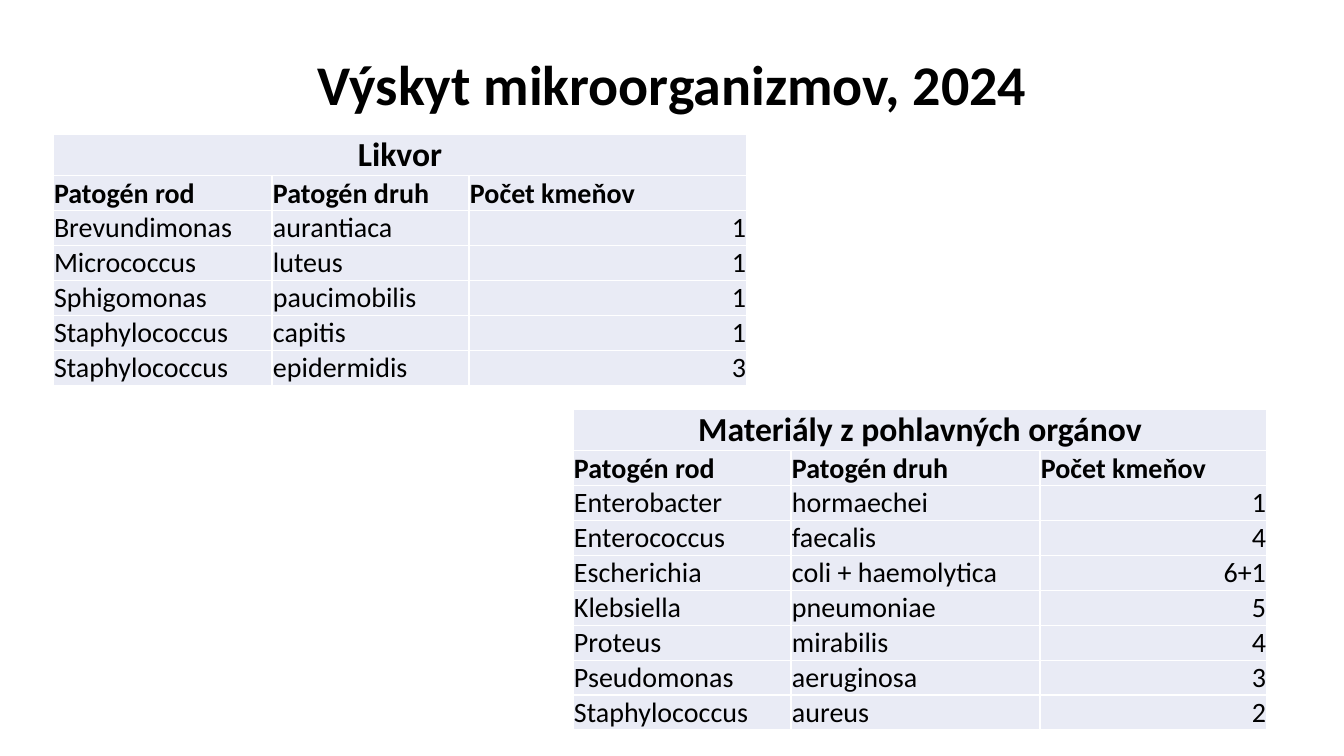
"""Build the slide on microbe counts with two tables."""
from lxml.etree import SubElement
from pptx import Presentation
from pptx.dml.color import RGBColor
from pptx.enum.text import MSO_ANCHOR, PP_ALIGN
from pptx.oxml.ns import qn
from pptx.util import Pt

PX = 914400 / 100.8
HEAD = ("Patogén rod", "Patogén druh", "Počet kmeňov")
TABLES = [
    ("Likvor", 53, 134, (219, 197, 278), [
        ("Brevundimonas", "aurantiaca", "1"),
        ("Micrococcus", "luteus", "1"),
        ("Sphigomonas", "paucimobilis", "1"),
        ("Staphylococcus", "capitis", "1"),
        ("Staphylococcus", "epidermidis", "3"),
    ]),
    ("Materiály z pohlavných orgánov", 573, 409, (218, 249, 227), [
        ("Enterobacter", "hormaechei", "1"),
        ("Enterococcus", "faecalis", "4"),
        ("Escherichia", "coli + haemolytica", "6+1"),
        ("Klebsiella", "pneumoniae", "5"),
        ("Proteus", "mirabilis", "4"),
        ("Pseudomonas", "aeruginosa", "3"),
        ("Staphylococcus", "aureus", "2"),
    ]),
]


def px(*sizes):
    return [round(size * PX) for size in sizes]


def write(frame, text, size, bold, align):
    para = frame.paragraphs[0]
    para.alignment = align
    run = para.add_run()
    run.text = text
    look = {"name": "Calibri", "size": Pt(size), "bold": bold}
    for key, value in look.items():
        setattr(run.font, key, value)
    run.font.color.rgb = RGBColor.from_string("000000")
    return para


deck = Presentation()
deck.slide_width, deck.slide_height = px(1344, 756)
slide = deck.slides.add_slide(deck.slide_layouts[6])

title = slide.shapes.add_textbox(*px(251, 40, 842, 94)).text_frame
title.word_wrap = True
title.vertical_anchor = MSO_ANCHOR.MIDDLE
para = write(title, "Výskyt mikroorganizmov, 2024", 40, True, PP_ALIGN.CENTER)
para.line_spacing = 0.9

side, base = px(1, 0)
form = {"margin_left": side, "margin_right": side, "margin_top": side,
        "margin_bottom": base, "vertical_anchor": MSO_ANCHOR.BOTTOM}

for name, left, top, widths, data in TABLES:
    rows = [(name, "", ""), HEAD, *data]
    highs = [41] + [35] * (len(rows) - 1)
    box = px(left, top, sum(widths), sum(highs))
    table = slide.shapes.add_table(len(rows), len(widths), *box).table
    table.first_row = table.horz_banding = False
    for col, width in zip(table.columns, px(*widths)):
        col.width = width
    for row, high in zip(table.rows, px(*highs)):
        row.height = high
    table.cell(0, 0).merge(table.cell(0, 2))

    for r, row in enumerate(rows):
        for c, text in enumerate(row):
            cell = table.cell(r, c)
            for key, value in form.items():
                setattr(cell, key, value)
            props = cell._tc.get_or_add_tcPr()
            for edge in ("lnL", "lnR", "lnT", "lnB"):
                line = SubElement(props, qn("a:" + edge), w=str(Pt(1)))
                fill = SubElement(line, qn("a:solidFill"))
                SubElement(fill, qn("a:srgbClr"), val="FFFFFF")
            cell.fill.solid()
            cell.fill.fore_color.rgb = RGBColor.from_string("E9EBF5")
            if text:
                align = PP_ALIGN.LEFT
                if r == 0:
                    align = PP_ALIGN.CENTER
                elif r > 1 and c == 2:
                    align = PP_ALIGN.RIGHT
                write(cell.text_frame, text, 20 if r else 24, r < 2, align)

deck.save("out.pptx")
